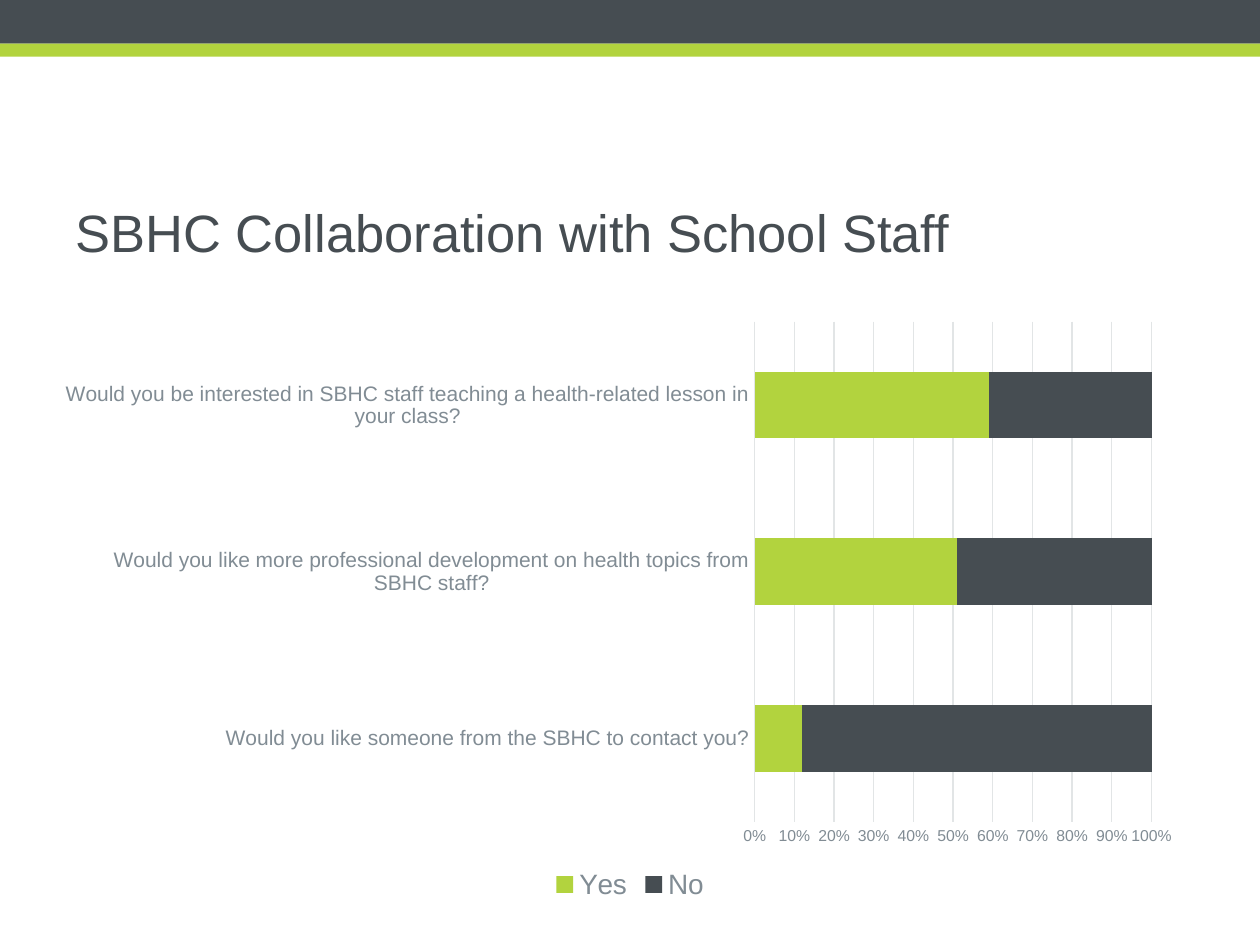
from lxml import etree
from pptx import Presentation
from pptx.chart.data import CategoryChartData
from pptx.dml.color import RGBColor
from pptx.enum.chart import XL_CHART_TYPE, XL_LEGEND_POSITION, XL_TICK_MARK
from pptx.enum.shapes import MSO_SHAPE
from pptx.enum.text import MSO_ANCHOR, PP_ALIGN
from pptx.oxml.ns import qn
from pptx.util import Inches, Pt

SLATE = RGBColor(0x46, 0x4D, 0x52)
LIME = RGBColor(0xB2, 0xD3, 0x3E)
GRAY = RGBColor(0x81, 0x8C, 0x94)
PALE = RGBColor(0xE2, 0xE5, 0xE6)
WIDTH, HEIGHT = Inches(10), Inches(7.5)
MARGIN = 0.05
FONT_NAME = "Arial"

ANSWERS = {
    "Would you like someone from the SBHC to contact you?": (12, 88),
    "Would you like more professional development on health topics from SBHC staff?": (51, 49),
    "Would you be interested in SBHC staff teaching a health-related lesson in your class?": (59, 41),
}
SERIES = {"Yes": LIME, "No": SLATE}
PLOT_LAYOUT = {"x": 0.61, "y": 0.02, "w": 0.35, "h": 0.84}


def share_box(left, top, width, height):
    return int(WIDTH * left), int(HEIGHT * top), int(WIDTH * width), int(HEIGHT * height)


def set_attributes(target, values):
    for name, value in values.items():
        setattr(target, name, value)


def format_font(font, size, color):
    set_attributes(font, {"name": FONT_NAME, "size": Pt(size), "bold": False})
    font.color.rgb = color


def format_line(line, color):
    line.color.rgb = color
    line.width = Pt(0.75)


def add_band(slide, box, color):
    band = slide.shapes.add_shape(MSO_SHAPE.RECTANGLE, *box)
    band.shadow.inherit = False
    band.fill.solid()
    band.fill.fore_color.rgb = color
    band.line.fill.background()


def add_header(slide, box):
    left, top, width, height = box
    slate_height = int(height * 0.77)
    add_band(slide, (left, top, width, slate_height), SLATE)
    add_band(slide, (left, top + slate_height, width, height - slate_height), LIME)


def place_title(slide, box, text):
    title = slide.shapes.title
    set_attributes(title, dict(zip(("left", "top", "width", "height"), box)))
    frame = title.text_frame
    set_attributes(frame, {"text": text, "vertical_anchor": MSO_ANCHOR.MIDDLE, "word_wrap": True})
    paragraph = frame.paragraphs[0]
    paragraph.alignment = PP_ALIGN.LEFT
    format_font(paragraph.runs[0].font, 30, SLATE)


def fix_plot_layout(chart):
    plot_area = chart.plots[0]._element.getparent()
    layout = plot_area.find(qn("c:layout"))
    if layout is None:
        layout = etree.Element(qn("c:layout"))
        plot_area.insert(0, layout)
    manual = etree.SubElement(layout, qn("c:manualLayout"))
    settings = {"layoutTarget": "inner", "xMode": "edge", "yMode": "edge", **PLOT_LAYOUT}
    for name, value in settings.items():
        etree.SubElement(manual, qn(f"c:{name}")).set("val", str(value))


def format_axes(chart):
    hidden_ticks = {"major_tick_mark": XL_TICK_MARK.NONE, "minor_tick_mark": XL_TICK_MARK.NONE}
    for axis, size in ((chart.category_axis, 12), (chart.value_axis, 9)):
        set_attributes(axis, hidden_ticks)
        format_font(axis.tick_labels.font, size, GRAY)
    format_line(chart.category_axis.format.line, PALE)
    value_axis = chart.value_axis
    set_attributes(value_axis, {
        "minimum_scale": 0, "maximum_scale": 1, "major_unit": 0.1, "has_major_gridlines": True,
    })
    value_axis.format.line.fill.background()
    format_line(value_axis.major_gridlines.format.line, PALE)
    set_attributes(value_axis.tick_labels, {"number_format": "0%", "number_format_is_linked": False})


def add_answer_chart(slide, box):
    data = CategoryChartData()
    data.categories = list(ANSWERS)
    for name, values in zip(SERIES, zip(*ANSWERS.values())):
        data.add_series(name, values)
    chart = slide.shapes.add_chart(XL_CHART_TYPE.BAR_STACKED_100, *box, data).chart
    chart.has_title = False
    format_font(chart.font, 10, SLATE)
    plot = chart.plots[0]
    set_attributes(plot, {"gap_width": 150, "overlap": 100, "vary_by_categories": False})
    for series, color in zip(plot.series, SERIES.values()):
        series.format.fill.solid()
        series.format.fill.fore_color.rgb = color
    format_axes(chart)
    chart.has_legend = True
    set_attributes(chart.legend, {"position": XL_LEGEND_POSITION.BOTTOM, "include_in_layout": False})
    format_font(chart.legend.font, 16, GRAY)
    fix_plot_layout(chart)


def main():
    presentation = Presentation()
    set_attributes(presentation, {"slide_width": WIDTH, "slide_height": HEIGHT})
    slide = presentation.slides.add_slide(presentation.slide_layouts[5])
    content_width = 1 - 2 * MARGIN
    add_header(slide, share_box(0, 0, 1, 0.06))
    place_title(slide, share_box(MARGIN, 0.167, content_width, 0.156), "SBHC Collaboration with School Staff")
    add_answer_chart(slide, share_box(MARGIN, 0.328, content_width, 0.63))
    presentation.save("out.pptx")


if __name__ == "__main__":
    main()
